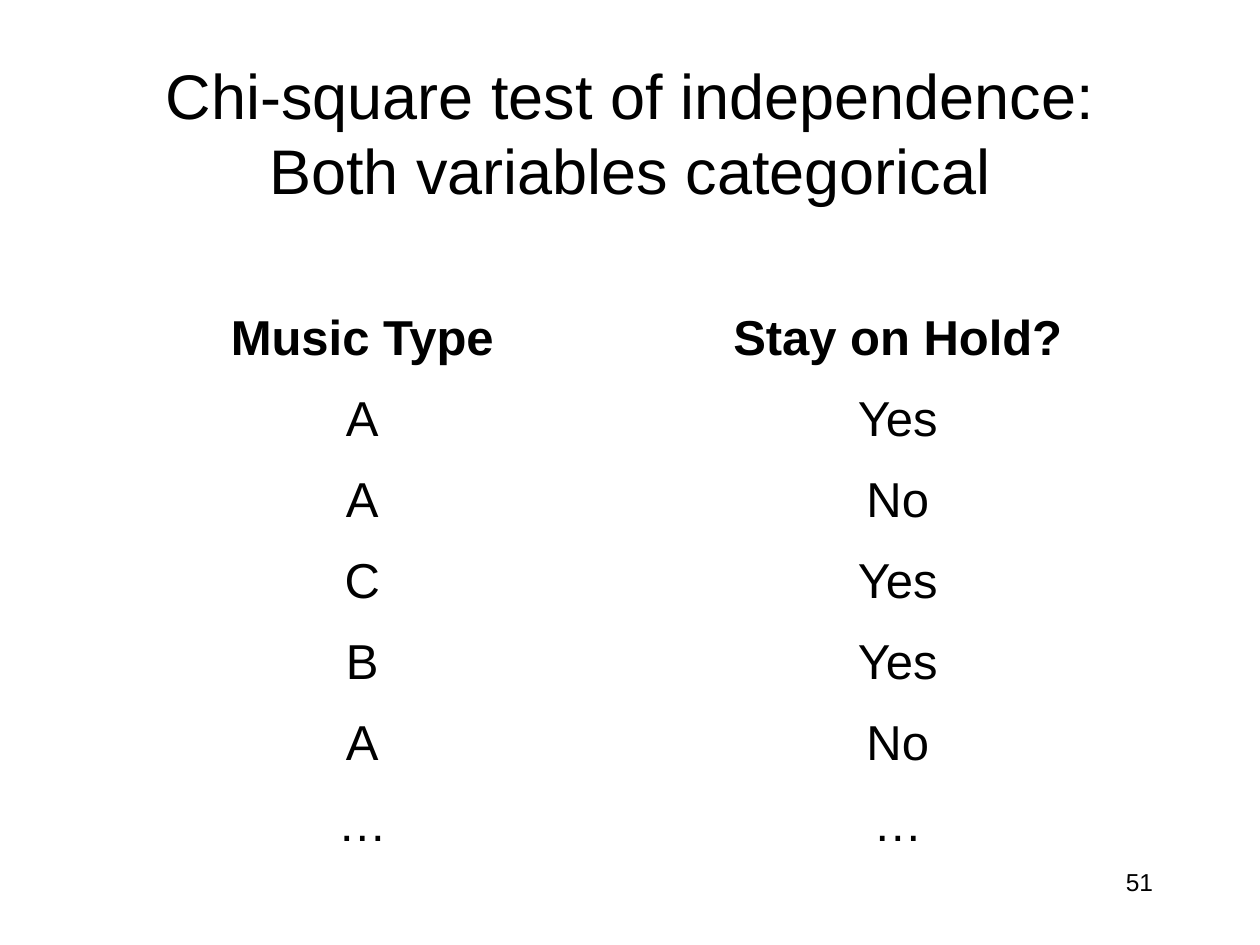
from pptx import Presentation
from pptx.dml.color import RGBColor
from pptx.enum.text import MSO_ANCHOR, PP_ALIGN
from pptx.util import Inches, Pt

BLACK = RGBColor(0, 0, 0)
FONT = "Arial"
CENTER, RIGHT = PP_ALIGN.CENTER, PP_ALIGN.RIGHT
TOP, MIDDLE = MSO_ANCHOR.TOP, MSO_ANCHOR.MIDDLE

MARGIN = 0.75
CONTENT_W = 10 - 2 * MARGIN

OBSERVATIONS = [
    ("Music Type", "Stay on Hold?"),
    ("A", "Yes"),
    ("A", "No"),
    ("C", "Yes"),
    ("B", "Yes"),
    ("A", "No"),
    ("…", "…"),
]


def write(tf, text, size, align=CENTER, bold=False):
    p = tf.paragraphs[0]
    p.alignment = align
    r = p.add_run()
    r.text = text
    r.font.name = FONT
    r.font.size = Pt(size)
    r.font.bold = bold
    r.font.color.rgb = BLACK


def add_text(s, box, text, size, anchor=TOP, **fmt):
    tf = s.shapes.add_textbox(*map(Inches, box)).text_frame
    tf.word_wrap = True
    tf.vertical_anchor = anchor
    write(tf, text, size, **fmt)


def add_observations(s, box, rows):
    """Plain, unfilled table with a bold heading row."""
    frame = s.shapes.add_table(len(rows), len(rows[0]), *map(Inches, box))
    table = frame.table
    table.first_row = table.horz_banding = False
    for i, row in enumerate(rows):
        for j, text in enumerate(row):
            cell = table.cell(i, j)
            cell.fill.background()
            write(cell.text_frame, text, 28, bold=i == 0)


def main():
    prs = Presentation()
    prs.slide_width, prs.slide_height = Inches(10), Inches(7.5)
    s = prs.slides.add_slide(prs.slide_layouts[6])
    add_text(s, (MARGIN, 0.42, CONTENT_W, 1.25),
             "Chi-square test of independence: Both variables categorical",
             36, anchor=MIDDLE)
    add_observations(s, (MARGIN, 2.42, CONTENT_W, 4.5), OBSERVATIONS)
    add_text(s, (7.17, 6.83, 2.08, 0.5), "51", 14, align=RIGHT)
    prs.save("out.pptx")


if __name__ == "__main__":
    main()
